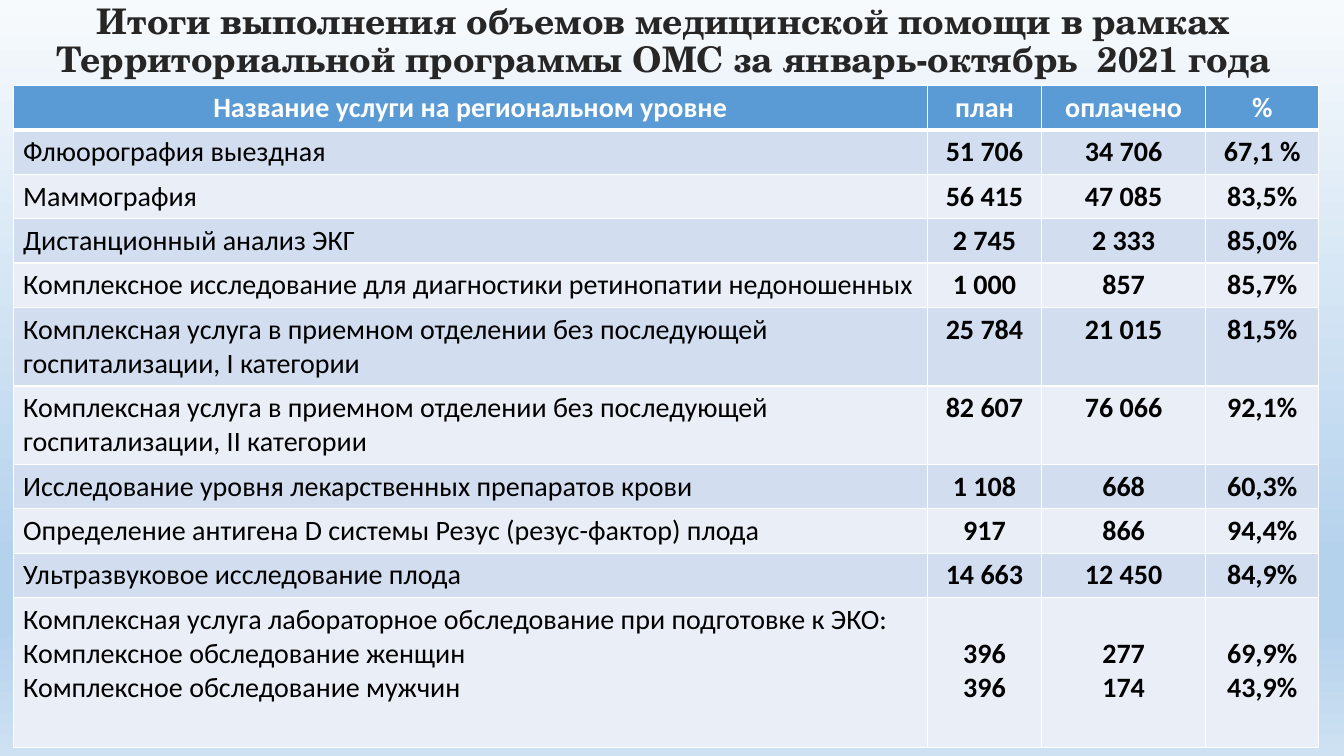
from lxml import etree
from pptx import Presentation
from pptx.dml.color import RGBColor
from pptx.enum.text import MSO_ANCHOR, PP_ALIGN
from pptx.oxml.ns import qn
from pptx.util import Inches, Pt

COLORS = {
    "header": "5B9BD5", "odd": "D2DEEF", "even": "EAEFF7",
    "white": "FFFFFF", "black": "000000", "title": "262626",
}
BACKGROUND_STOPS = [(0, "F7FAFD"), (74, "B5D2EC"), (83, "B5D2EC"), (100, "CEE1F2")]
TITLE = ("Итоги выполнения объемов медицинской помощи в рамках "
         "Территориальной программы ОМС за январь-октябрь  2021 года")
COLUMN_WIDTHS = [9.07, 1.13, 1.63, 1.12]
HEADER_HEIGHT, LINE_HEIGHT, CELL_MARGIN = 0.44, 0.34, 0.05
LAST_ROW_HEIGHT = 1.49
ROWS = [
    ("Название услуги на региональном уровне", "план", "оплачено", "%"),
    ("Флюорография выездная", "51 706", "34 706", "67,1 %"),
    ("Маммография", "56 415", "47 085", "83,5%"),
    ("Дистанционный анализ ЭКГ", "2 745", "2 333", "85,0%"),
    ("Комплексное исследование для диагностики ретинопатии недоношенных",
     "1 000", "857", "85,7%"),
    ("Комплексная услуга в приемном отделении без последующей госпитализации, I категории",
     "25 784", "21 015", "81,5%"),
    ("Комплексная услуга в приемном отделении без последующей госпитализации, II категории",
     "82 607", "76 066", "92,1%"),
    ("Исследование уровня лекарственных препаратов крови", "1 108", "668", "60,3%"),
    ("Определение антигена D системы Резус (резус-фактор) плода", "917", "866", "94,4%"),
    ("Ультразвуковое исследование плода", "14 663", "12 450", "84,9%"),
    ("Комплексная услуга лабораторное обследование при подготовке к ЭКО:\n"
     "Комплексное обследование женщин\nКомплексное обследование мужчин",
     "396\n396", "277\n174", "69,9%\n43,9%"),
]
TWO_LINE_ROWS = (5, 6)
LAST_ROW = len(ROWS) - 1


def style_paragraph(para, font_name, size, color, bold, align):
    para.alignment = align
    para.font.name = font_name
    para.font.size = Pt(size)
    para.font.bold = bold
    para.font.color.rgb = RGBColor.from_string(COLORS[color])


def set_borders(cell, top, bottom):
    """Draw white cell borders; top and bottom are widths in points."""
    properties = cell._tc.get_or_add_tcPr()
    sides = [("a:lnL", 1), ("a:lnR", 1), ("a:lnT", top), ("a:lnB", bottom)]
    for position, (tag, width) in enumerate(sides):
        line = etree.Element(qn(tag), w=str(Pt(width)))
        fill = etree.SubElement(line, qn("a:solidFill"))
        etree.SubElement(fill, qn("a:srgbClr"), val=COLORS["white"])
        properties.insert(position, line)


deck = Presentation()
deck.slide_width, deck.slide_height = Inches(13.33), Inches(7.5)
page = deck.slides.add_slide(deck.slide_layouts[6])

# Background gradient
background = page.background.fill
background.gradient()
background.gradient_angle = 270
stop_list = page._element.find(".//" + qn("a:gsLst"))
for stop in list(stop_list):
    stop_list.remove(stop)
for percent, color in BACKGROUND_STOPS:
    stop = etree.SubElement(stop_list, qn("a:gs"), pos=str(percent * 1000))
    etree.SubElement(stop, qn("a:srgbClr"), val=color)

# Title
title = page.shapes.add_textbox(Inches(0.36), Inches(0.03), Inches(12.45), Inches(0.78))
frame = title.text_frame
frame.word_wrap = True
frame.margin_top = frame.margin_bottom = 0
frame.vertical_anchor = MSO_ANCHOR.MIDDLE
frame.text = TITLE
style_paragraph(frame.paragraphs[0], "TeX Gyre Schola", 25.2, "title", True, PP_ALIGN.CENTER)
frame.paragraphs[0].line_spacing = 0.9

# Table of services
table = page.shapes.add_table(len(ROWS), len(COLUMN_WIDTHS), Inches(0.13), Inches(0.85),
                              Inches(12.95), Inches(6.5)).table
for column, width in zip(table.columns, COLUMN_WIDTHS):
    column.width = Inches(width)

for row_index, texts in enumerate(ROWS):
    is_header = row_index == 0
    if row_index == LAST_ROW:
        height = LAST_ROW_HEIGHT
    elif row_index in TWO_LINE_ROWS:
        height = 2 * (LINE_HEIGHT + CELL_MARGIN)
    else:
        height = HEADER_HEIGHT
    table.rows[row_index].height = Inches(height)
    fill_color = "header" if is_header else "odd" if row_index % 2 else "even"

    for column_index, text in enumerate(texts):
        is_name = column_index == 0
        cell = table.cell(row_index, column_index)
        cell.text = text
        cell.margin_top = cell.margin_bottom = Inches(CELL_MARGIN)
        if row_index == LAST_ROW and not is_name:
            cell.margin_top = Inches(CELL_MARGIN + LINE_HEIGHT)
        cell.fill.solid()
        cell.fill.fore_color.rgb = RGBColor.from_string(COLORS[fill_color])
        set_borders(cell, top=3 if row_index == 1 else 1, bottom=3 if is_header else 1)
        for para in cell.text_frame.paragraphs:
            style_paragraph(para, "Calibri", 20, "white" if is_header else "black",
                            is_header or not is_name,
                            PP_ALIGN.LEFT if is_name and not is_header else PP_ALIGN.CENTER)

deck.save("out.pptx")
